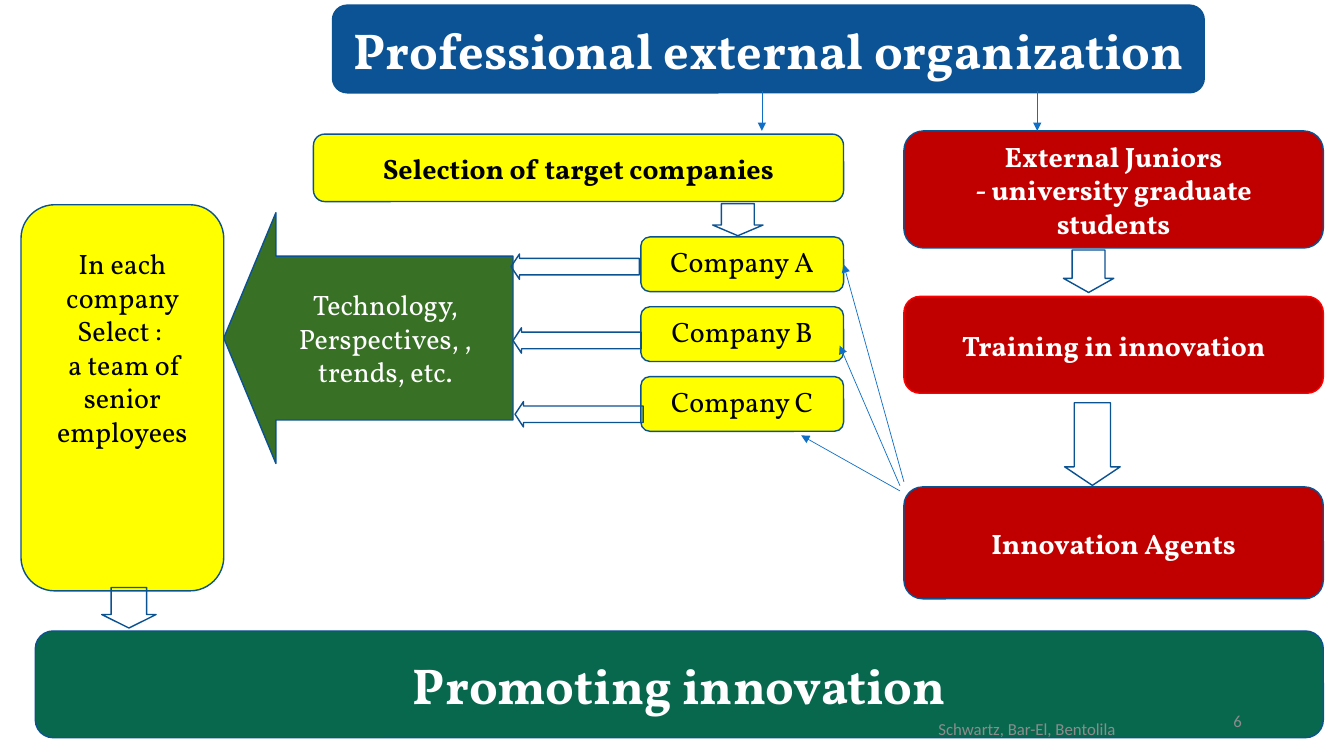
from dataclasses import dataclass

from lxml import etree
from pptx import Presentation
from pptx.dml.color import RGBColor
from pptx.enum import shapes, text
from pptx.oxml import ns
from pptx.util import Cm, Pt


@dataclass(frozen=True)
class Theme:
    yellow: str = "FFFF00"
    red: str = "C00000"
    bright_red: str = "FF0000"
    blue: str = "0B5394"
    leaf: str = "387026"
    green: str = "08684E"
    outline: str = "0B5292"
    link: str = "0F6FC6"
    white: str = "FFFFFF"
    black: str = "000000"
    grey: str = "8C8C8C"
    heading: int = 36
    body: int = 20
    small: int = 12
    font: str = "Vollkorn"
    footer_font: str = "Calibri"


T = Theme()
SHAPE = shapes.MSO_SHAPE
ALIGN = text.PP_ALIGN
ANCHOR = text.MSO_ANCHOR


def rgb(value):
    return RGBColor.from_string(value)


def write(s, lines, size, color, bold=False, font=T.font,
          align=ALIGN.CENTER, anchor=ANCHOR.MIDDLE):
    tf = s.text_frame
    tf.word_wrap = True
    tf.vertical_anchor = anchor
    for i, line in enumerate(lines):
        p = tf.paragraphs[0] if i == 0 else tf.add_paragraph()
        p.alignment = align
        r = p.add_run()
        r.text = line
        r.font.name = font
        r.font.size = Pt(size)
        r.font.bold = bold
        r.font.color.rgb = rgb(color)


def add_preset(sp, kind, at, fill=None, line=T.outline):
    s = sp.add_shape(kind, *map(Cm, at))
    s.shadow.inherit = False
    if fill:
        s.fill.solid()
        s.fill.fore_color.rgb = rgb(fill)
    else:
        s.fill.background()
    s.line.color.rgb = rgb(line)
    s.line.width = Pt(1)
    return s


def add_box(sp, at, fill, lines, color=T.white, size=T.body, bold=True,
            line=T.outline, anchor=ANCHOR.MIDDLE):
    s = add_preset(sp, SHAPE.ROUNDED_RECTANGLE, at, fill, line)
    write(s, lines, size, color, bold, anchor=anchor)
    return s


def add_block_arrow(sp, at, fill=None, head=0.334, rotation=0):
    s = add_preset(sp, SHAPE.LEFT_ARROW, at, fill)
    s.adjustments[0] = 0.653
    s.adjustments[1] = head
    s.rotation = rotation
    return s


def add_thin_arrow(sp, start, end, target=None, side=3):
    c = sp.add_connector(shapes.MSO_CONNECTOR.STRAIGHT, *map(Cm, start + end))
    if target is not None:
        c.end_connect(target, side)
    c.line.color.rgb = rgb(T.link)
    c.line.width = Pt(0.5)
    etree.SubElement(c.line._get_or_add_ln(), ns.qn("a:tailEnd"), type="triangle")
    etree.SubElement(c._element.spPr, ns.qn("a:effectLst"))


def add_footer(sp, at, line, align):
    s = sp.add_textbox(*map(Cm, at))
    write(s, [line], T.small, T.grey, font=T.footer_font, align=align)


def main():
    prs = Presentation()
    prs.slide_width, prs.slide_height = Cm(33.87), Cm(19.05)
    sp = prs.slides.add_slide(prs.slide_layouts[6]).shapes

    # Organization and goal banners
    add_box(sp, (8.38, 0.13, 21.97, 2.21), T.blue,
            ["Professional external organization"], size=T.heading)
    add_box(sp, (0.89, 15.9, 32.46, 2.69), T.green,
            ["Promoting innovation"], size=T.heading)

    # Juniors, training and agents
    red_steps = [
        (3.3, 2.95, ["External Juniors", "- university graduate students"], T.outline),
        (7.47, 2.44, ["Training in innovation"], T.bright_red),
        (12.27, 2.82, ["Innovation Agents"], T.outline),
    ]
    for top, height, lines, line in red_steps:
        add_box(sp, (22.78, top, 10.57, height), T.red, lines, line=line)

    # Target companies, each with an arrow to the knowledge block
    add_box(sp, (7.9, 3.38, 13.36, 1.7), T.yellow,
            ["Selection of target companies"], T.black)
    add_block_arrow_text = ["Technology, Perspectives, , trends, etc."]
    knowledge = add_block_arrow(sp, (5.64, 5.36, 7.29, 6.32), T.leaf, head=0.208)
    write(knowledge, add_block_arrow_text, T.body, T.white)
    companies = []
    for i, letter in enumerate("ABC"):
        companies.append(add_box(
            sp, (16.15, 5.97 + 1.76 * i, 5.11, 1.38), T.yellow,
            [f"Company {letter}"], T.black, bold=False, anchor=ANCHOR.TOP))
        add_block_arrow(sp, (12.88 + 0.05 * i, 6.4 + 1.86 * i, 3.23, 0.64))

    # Senior team, its text raised by a deep bottom inset
    team = add_box(sp, (0.53, 5.16, 5.11, 9.73), T.yellow,
                   ["In each company Select : ", " a team of senior employees"],
                   T.black, bold=False)
    team.text_frame.margin_bottom = Cm(2.67)

    # Block arrows turned downwards
    for at in [(2.74, 14.63, 1.02, 1.37), (26.9, 6.2, 1.07, 1.27),
               (18.19, 4.9, 0.81, 1.27), (26.49, 10.49, 2.08, 1.4)]:
        add_block_arrow(sp, at, rotation=270)

    # Thin arrows from the organization and from the agents
    for x in (19.2, 26.14):
        add_thin_arrow(sp, (x, 2.3), (x, 3.3))
    add_thin_arrow(sp, (22.78, 12.14), (21.26, 6.66), companies[0])
    add_thin_arrow(sp, (22.68, 12.24), (21.16, 8.71))
    add_thin_arrow(sp, (22.68, 12.37), (20.19, 10.97))

    # Footer and slide number
    add_footer(sp, (20.17, 17.86, 11.43, 1.02), "Schwartz, Bar-El, Bentolila", ALIGN.CENTER)
    add_footer(sp, (23.93, 17.65, 7.62, 1.02), "6", ALIGN.RIGHT)

    prs.save("out.pptx")


if __name__ == "__main__":
    main()
